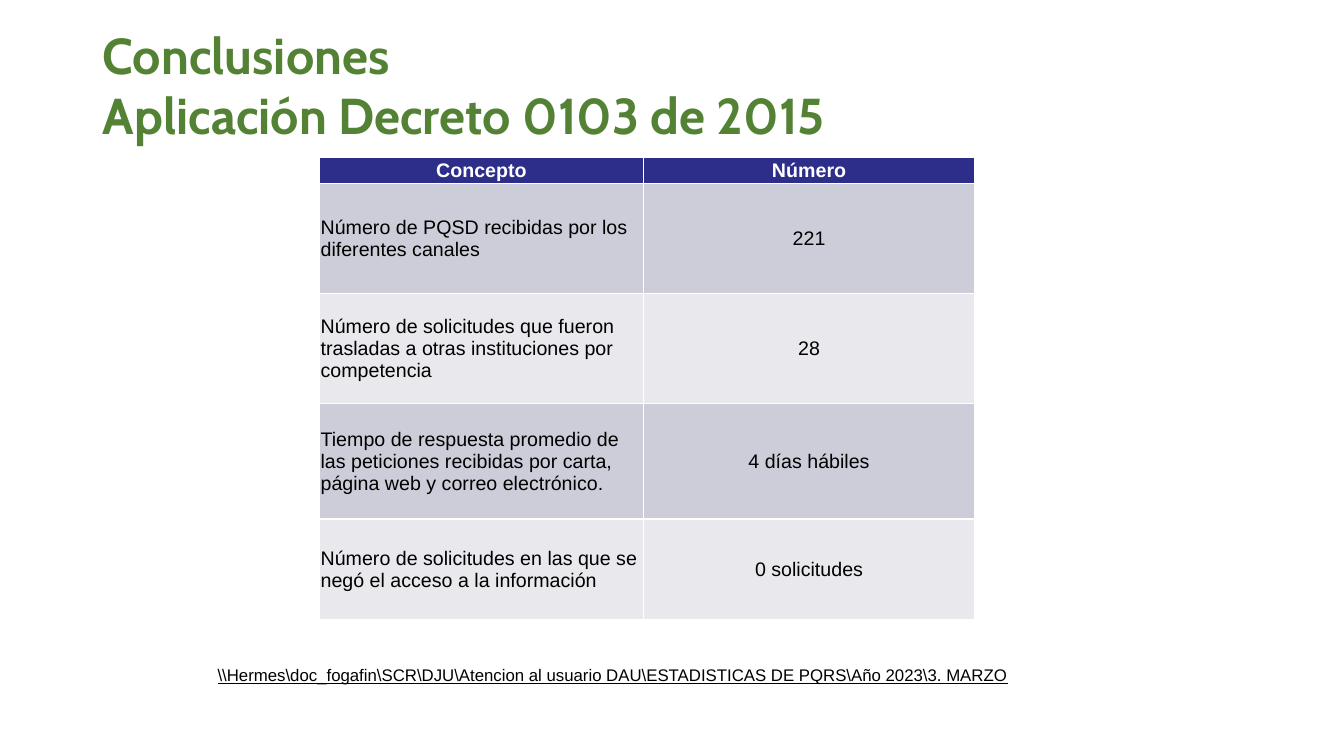
from lxml import etree
from pptx import Presentation
from pptx.dml.color import RGBColor
from pptx.enum.text import MSO_ANCHOR, MSO_AUTO_SIZE, PP_ALIGN
from pptx.oxml.ns import qn
from pptx.util import Pt

PX = 9144  # 100 px to the inch
LEFT, CENTER, JUSTIFY = PP_ALIGN.LEFT, PP_ALIGN.CENTER, PP_ALIGN.JUSTIFY
MIDDLE, FIXED = MSO_ANCHOR.MIDDLE, MSO_AUTO_SIZE.NONE

COLORS = {
    "green": "548235",
    "navy": "2D2D8A",
    "dark": "CDCDDA",
    "light": "E8E8ED",
    "white": "FFFFFF",
    "black": "000000",
}
TITLE = "Conclusiones\vAplicación Decreto 0103 de 2015"
ROWS = [
    ("Concepto", "Número"),
    ("Número de PQSD recibidas por los diferentes canales", "221"),
    ("Número de solicitudes que fueron trasladas a otras instituciones "
     "por competencia", "28"),
    ("Tiempo de respuesta promedio de las peticiones recibidas por carta, "
     "página web y correo electrónico.", "4 días hábiles"),
    ("Número de solicitudes en las que se negó el acceso a la información",
     "0 solicitudes"),
]
WIDTHS = (321, 329)
HEIGHTS = (26, 109, 109, 115, 100)
SOURCE = (r"\\Hermes\doc_fogafin\SCR\DJU\Atencion al usuario DAU"
          r"\ESTADISTICAS DE PQRS\Año 2023\3. MARZO")


def px(*sizes):
    return [size * PX for size in sizes]


def color(name):
    return RGBColor.from_string(COLORS[name])


def write(frame, text, size=14, face="Arial", ink="black", bold=False,
          line=False, align=LEFT):
    frame.word_wrap = True
    para = frame.paragraphs[0]
    para.text = text
    para.alignment = align
    for run in para.runs:
        font = run.font
        font.size, font.name = Pt(size), face
        font.bold, font.underline = bold, line
        font.color.rgb = color(ink)


def border(cell, side, width):
    edge = etree.SubElement(cell._tc.get_or_add_tcPr(), qn(f"a:ln{side}"),
                            w=str(Pt(width)))
    fill = etree.SubElement(edge, qn("a:solidFill"))
    etree.SubElement(fill, qn("a:srgbClr"), val=COLORS["white"])


def add_title(slide):
    title = slide.shapes.title
    title.left, title.top, title.width, title.height = px(92, 11, 1150, 145)
    frame = title.text_frame
    frame.auto_size = FIXED
    frame.vertical_anchor = MIDDLE
    write(frame, TITLE, size=36, face="Cabin", ink="green", bold=True)


def fill_cell(cell, text, row, col):
    head = row == 0
    cell.vertical_anchor = MIDDLE
    cell.margin_left, cell.margin_right = px(1, 1)
    cell.margin_top, cell.margin_bottom = px(1, 0)
    for side in "LRTB":
        thick = (row, side) in ((0, "B"), (1, "T"))
        border(cell, side, 1.5 if thick else 1)
    cell.fill.solid()
    shade = "navy" if head else "dark" if row % 2 else "light"
    cell.fill.fore_color.rgb = color(shade)
    write(cell.text_frame, text, bold=head, ink="white" if head else "black",
          align=CENTER if head or col else LEFT)


def add_grid(slide):
    box = px(317, 156, sum(WIDTHS), sum(HEIGHTS))
    table = slide.shapes.add_table(len(ROWS), len(WIDTHS), *box).table
    for col, width in zip(table.columns, WIDTHS):
        col.width = width * PX
    for row, height in zip(table.rows, HEIGHTS):
        row.height = height * PX
    for row, texts in enumerate(ROWS):
        for col, text in enumerate(texts):
            fill_cell(table.cell(row, col), text, row, col)


def add_source(slide):
    box = slide.shapes.add_textbox(*px(206, 655, 954, 30))
    write(box.text_frame, SOURCE, size=12, line=True, align=JUSTIFY)


def main():
    deck = Presentation()
    deck.slide_width, deck.slide_height = px(1333, 750)
    slide = deck.slides.add_slide(deck.slide_layouts[5])
    add_title(slide)
    add_source(slide)
    add_grid(slide)
    deck.save("out.pptx")


if __name__ == "__main__":
    main()
